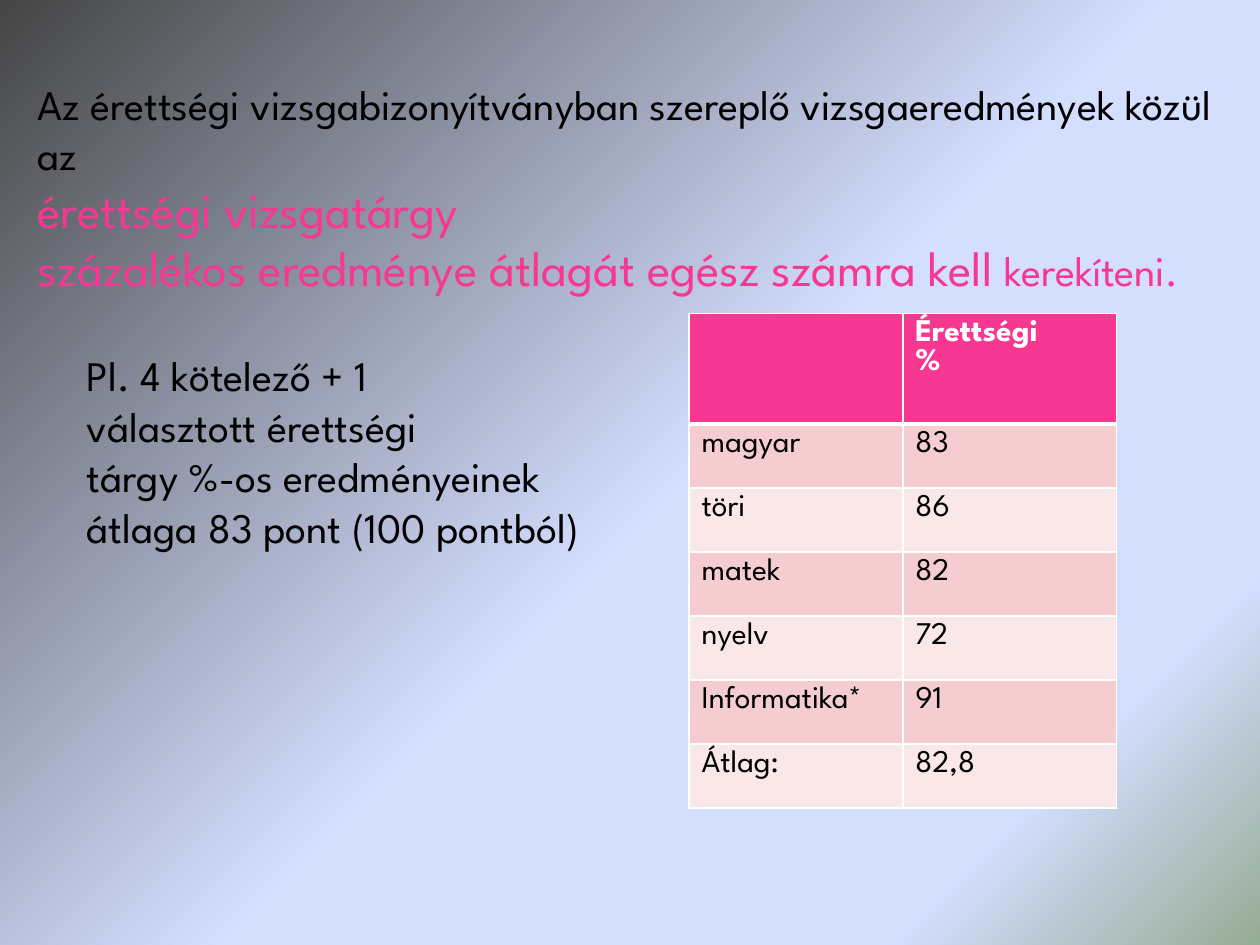
from lxml.etree import SubElement
from pptx import Presentation
from pptx.dml.color import RGBColor
from pptx.enum.text import MSO_ANCHOR, MSO_AUTO_SIZE
from pptx.oxml.ns import qn
from pptx.util import Cm, Pt

FONT = "League Spartan"
BLACK, WHITE, PINK = "000000", "FFFFFF", "F63892"
BANDS = ("F5CDD0", "FAE8E9")
GRADIENT = ((0, "454545"), (53, "D4DEFF"), (83, "D4DEFF"), (100, "96AB94"))


def color(hex_code):
    return RGBColor.from_string(hex_code)


class ExamSlide:
    """Holds the slide and its style, and adds text and tables to it."""

    def __init__(self, slide):
        self.slide = slide

    def background(self, stops, angle):
        fill = self.slide.background.fill
        fill.gradient()
        fill.gradient_angle = -angle % 360
        stop_list = fill._fill._gradFill.find(qn("a:gsLst"))
        for stop in list(stop_list):
            stop_list.remove(stop)
        for position, hex_code in stops:
            stop = SubElement(stop_list, qn("a:gs"), pos=str(position * 1000))
            SubElement(stop, qn("a:srgbClr"), val=hex_code)

    def style(self, font, size, hex_code, bold=False):
        font.name, font.size, font.bold = FONT, Pt(size), bold
        font.color.rgb = color(hex_code)

    def text(self, left, top, width, height, paragraphs, anchor=MSO_ANCHOR.TOP, wrap=True):
        frame = self.slide.shapes.add_textbox(Cm(left), Cm(top), Cm(width), Cm(height)).text_frame
        frame.word_wrap = wrap
        frame.auto_size = MSO_AUTO_SIZE.SHAPE_TO_FIT_TEXT
        frame.vertical_anchor = anchor
        for index, (words, size, hex_code) in enumerate(paragraphs):
            paragraph = frame.paragraphs[0] if index == 0 else frame.add_paragraph()
            paragraph.text = words
            self.style(paragraph.font, size, hex_code)
        return frame

    def border(self, cell, bottom):
        properties = cell._tc.get_or_add_tcPr()
        for index, (side, width) in enumerate((("L", 1), ("R", 1), ("T", 1), ("B", bottom))):
            line = properties.makeelement(qn(f"a:ln{side}"), {"w": str(Pt(width))})
            SubElement(SubElement(line, qn("a:solidFill")), qn("a:srgbClr"), val=WHITE)
            properties.insert(index, line)

    def table(self, left, top, column_width, row_heights, rows):
        columns = len(rows[0])
        table = self.slide.shapes.add_table(
            len(rows), columns, Cm(left), Cm(top),
            Cm(column_width * columns), Cm(sum(row_heights))).table
        for column in table.columns:
            column.width = Cm(column_width)
        for number, (height, values) in enumerate(zip(row_heights, rows)):
            header = number == 0
            table.rows[number].height = Cm(height)
            for cell, value in zip(table.rows[number].cells, values):
                cell.text = value
                cell.fill.solid()
                cell.fill.fore_color.rgb = color(PINK if header else BANDS[(number - 1) % 2])
                self.border(cell, 3 if header else 1)
                for paragraph in cell.text_frame.paragraphs:
                    self.style(paragraph.font, 18, WHITE if header else BLACK, header)


def main():
    presentation = Presentation()
    presentation.slide_width, presentation.slide_height = Cm(25.4), Cm(19.05)
    exam = ExamSlide(presentation.slides.add_slide(presentation.slide_layouts[6]))
    exam.background(GRADIENT, 45)

    results = [
        ("", "Érettségi\n%"),
        ("magyar", "83"),
        ("töri", "86"),
        ("matek", "82"),
        ("nyelv", "72"),
        ("Informatika*", "91"),
        ("Átlag:", "82,8"),
    ]
    exam.table(13.89, 6.32, 4.31, [2.23] + [1.29] * 6, results)

    rule = exam.text(0.51, 0.91, 24.59, 5.74, [
        ("Az érettségi vizsgabizonyítványban szereplő vizsgaeredmények közül az", 24, BLACK),
        ("érettségi vizsgatárgy", 28, PINK),
        ("százalékos eredménye átlagát egész számra kell ", 28, PINK),
    ], anchor=MSO_ANCHOR.MIDDLE)
    rounding = rule.paragraphs[-1].add_run()
    rounding.text = "kerekíteni."
    rounding.font.size = Pt(24)

    example = ("Pl. 4 kötelező + 1", "választott érettségi",
               "tárgy %-os eredményeinek", "átlaga 83 pont (100 pontból)")
    exam.text(1.5, 6.93, 12.45, 4.37, [(line, 24, BLACK) for line in example], wrap=False)

    presentation.save("out.pptx")


if __name__ == "__main__":
    main()
